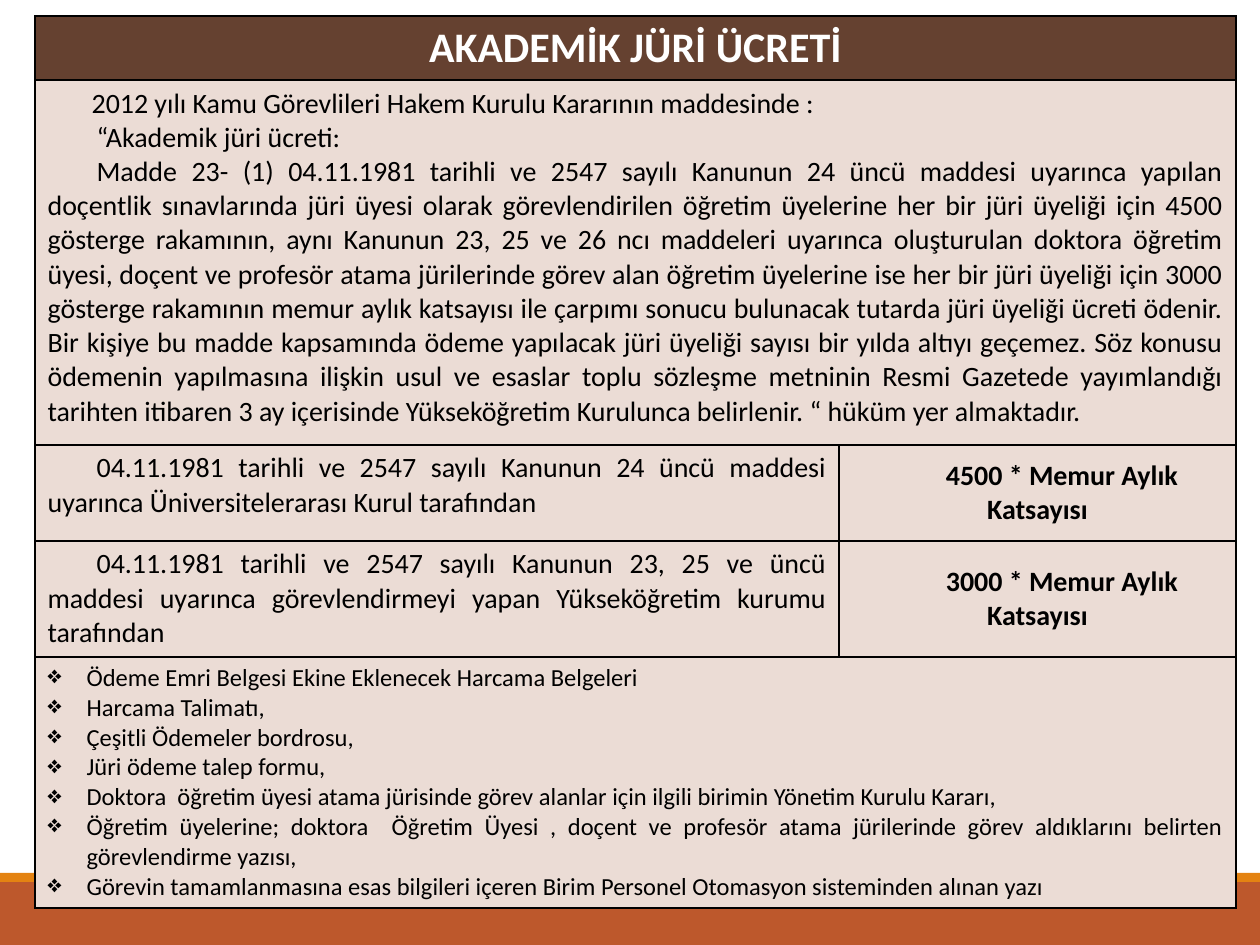
import pptx
import pptx.dml.color
import pptx.enum.shapes
import pptx.enum.text
import pptx.oxml
import pptx.oxml.ns
import pptx.util

PX = 914400 // 126
ALIGN = pptx.enum.text.PP_ALIGN
ANCHOR = pptx.enum.text.MSO_ANCHOR

BLACK, WHITE, BROWN, BEIGE = "000000", "FFFFFF", "654130", "EBDCD5"

# Content
TITLE = "AKADEMİK JÜRİ ÜCRETİ"
INTRO = "2012 yılı Kamu Görevlileri Hakem Kurulu Kararının maddesinde :"
ARTICLE = [
    "“Akademik jüri ücreti:",
    "Madde 23- (1) 04.11.1981 tarihli ve 2547 sayılı Kanunun 24 üncü maddesi uyarınca "
    "yapılan doçentlik sınavlarında jüri üyesi olarak görevlendirilen öğretim üyelerine "
    "her bir jüri üyeliği için 4500 gösterge rakamının, aynı Kanunun 23, 25 ve 26 ncı "
    "maddeleri uyarınca oluşturulan doktora öğretim üyesi, doçent ve profesör atama "
    "jürilerinde görev alan öğretim üyelerine ise her bir jüri üyeliği için 3000 gösterge "
    "rakamının memur aylık katsayısı ile çarpımı sonucu bulunacak tutarda jüri üyeliği "
    "ücreti ödenir. Bir kişiye bu madde kapsamında ödeme yapılacak jüri üyeliği sayısı bir "
    "yılda altıyı geçemez. Söz konusu ödemenin yapılmasına ilişkin usul ve esaslar toplu "
    "sözleşme metninin Resmi Gazetede yayımlandığı tarihten itibaren 3 ay içerisinde "
    "Yükseköğretim Kurulunca belirlenir. “ hüküm yer almaktadır.",
]
RATES = [
    ("04.11.1981 tarihli ve 2547 sayılı Kanunun 24 üncü maddesi uyarınca "
     "Üniversitelerarası Kurul tarafından", "4500 * Memur Aylık Katsayısı"),
    ("04.11.1981 tarihli ve 2547 sayılı Kanunun 23, 25 ve üncü maddesi uyarınca "
     "görevlendirmeyi yapan Yükseköğretim kurumu tarafından",
     "3000 * Memur Aylık Katsayısı"),
]
DOCUMENTS = [
    "Ödeme Emri Belgesi Ekine Eklenecek Harcama Belgeleri",
    "Harcama Talimatı,",
    "Çeşitli Ödemeler bordrosu,",
    "Jüri ödeme talep formu,",
    "Doktora  öğretim üyesi atama jürisinde görev alanlar için ilgili birimin "
    "Yönetim Kurulu Kararı,",
    "Öğretim üyelerine; doktora  Öğretim Üyesi , doçent ve profesör atama jürilerinde "
    "görev aldıklarını belirten görevlendirme yazısı,",
    "Görevin tamamlanmasına esas bilgileri içeren Birim Personel Otomasyon sisteminden "
    "alınan yazı",
]

# Layout in px
SLIDE = (1260, 945)
BANDS = [(882, 63, "BD582C"), (873, 9, "E48312")]  # top, height, colour
TABLE_LEFT, TABLE_TOP = 35, 16
COLUMNS = [804, 397]
ROWS = [64, 365, 96, 116, 251]
FIRST_LINE, INTRO_LINE, HANGING = 49, 44, 39


def colour(value):
    return pptx.dml.color.RGBColor.from_string(value)


def write(frame, text, size=16, bold=False, ink=BLACK, align=ALIGN.JUSTIFY,
          margin=0, indent=0, bullet=None):
    """Add one paragraph, using the frame's first one while it is empty."""
    paragraph = frame.paragraphs[0]
    if paragraph.runs:
        paragraph = frame.add_paragraph()
    paragraph.alignment = align
    properties = paragraph._p.get_or_add_pPr()
    properties.set("marL", str(margin * PX))
    properties.set("indent", str(indent * PX))
    if bullet:
        mark = pptx.oxml.ns.qn("a:buChar")
        properties.append(properties.makeelement(mark, {"char": bullet}))
    run = paragraph.add_run()
    run.text = text
    run.font.name = "Calibri"
    run.font.size = pptx.util.Pt(size)
    run.font.bold = bold
    run.font.color.rgb = colour(ink)


def style_cell(cell, fill):
    """Give a cell black 1 pt borders and a plain fill."""
    for side in ("lnL", "lnR", "lnT", "lnB"):
        cell._tc.get_or_add_tcPr().append(pptx.oxml.parse_xml(
            f'<a:{side} {pptx.oxml.ns.nsdecls("a")} w="12700"><a:solidFill>'
            f'<a:srgbClr val="{BLACK}"/></a:solidFill></a:{side}>'))
    cell.fill.solid()
    cell.fill.fore_color.rgb = colour(fill)


deck = pptx.Presentation()
deck.slide_width, deck.slide_height = (side * PX for side in SLIDE)
slide = deck.slides.add_slide(deck.slide_layouts[6])

# Bands at the foot
for top, height, fill in BANDS:
    band = slide.shapes.add_shape(pptx.enum.shapes.MSO_SHAPE.RECTANGLE,
                                  0, top * PX, SLIDE[0] * PX, height * PX)
    band.shadow.inherit = False
    band.fill.solid()
    band.fill.fore_color.rgb = colour(fill)
    band.line.fill.background()

# Table grid
table = slide.shapes.add_table(len(ROWS), len(COLUMNS), TABLE_LEFT * PX, TABLE_TOP * PX,
                               sum(COLUMNS) * PX, sum(ROWS) * PX).table
for column, width in zip(table.columns, COLUMNS):
    column.width = width * PX
for index, height in enumerate(ROWS):
    table.rows[index].height = height * PX
    for cell in table.rows[index].cells:
        style_cell(cell, BEIGE if index else BROWN)
last = len(ROWS) - 1
for index in (0, 1, last):
    table.cell(index, 0).merge(table.cell(index, 1))

# Title and article
write(table.cell(0, 0).text_frame, TITLE, size=24, bold=True, ink=WHITE,
      align=ALIGN.CENTER)
article = table.cell(1, 0).text_frame
write(article, INTRO, indent=INTRO_LINE)
for text in ARTICLE:
    write(article, text, indent=FIRST_LINE)

# Rates
for index, (basis, rate) in enumerate(RATES, start=2):
    write(table.cell(index, 0).text_frame, basis, indent=FIRST_LINE)
    rate_cell = table.cell(index, 1)
    rate_cell.vertical_anchor = ANCHOR.MIDDLE
    write(rate_cell.text_frame, rate, bold=True, align=ALIGN.CENTER, indent=FIRST_LINE)

# Documents to attach
for text in DOCUMENTS:
    write(table.cell(last, 0).text_frame, text, size=14, margin=HANGING,
          indent=-HANGING, bullet="❖")

deck.save("out.pptx")
